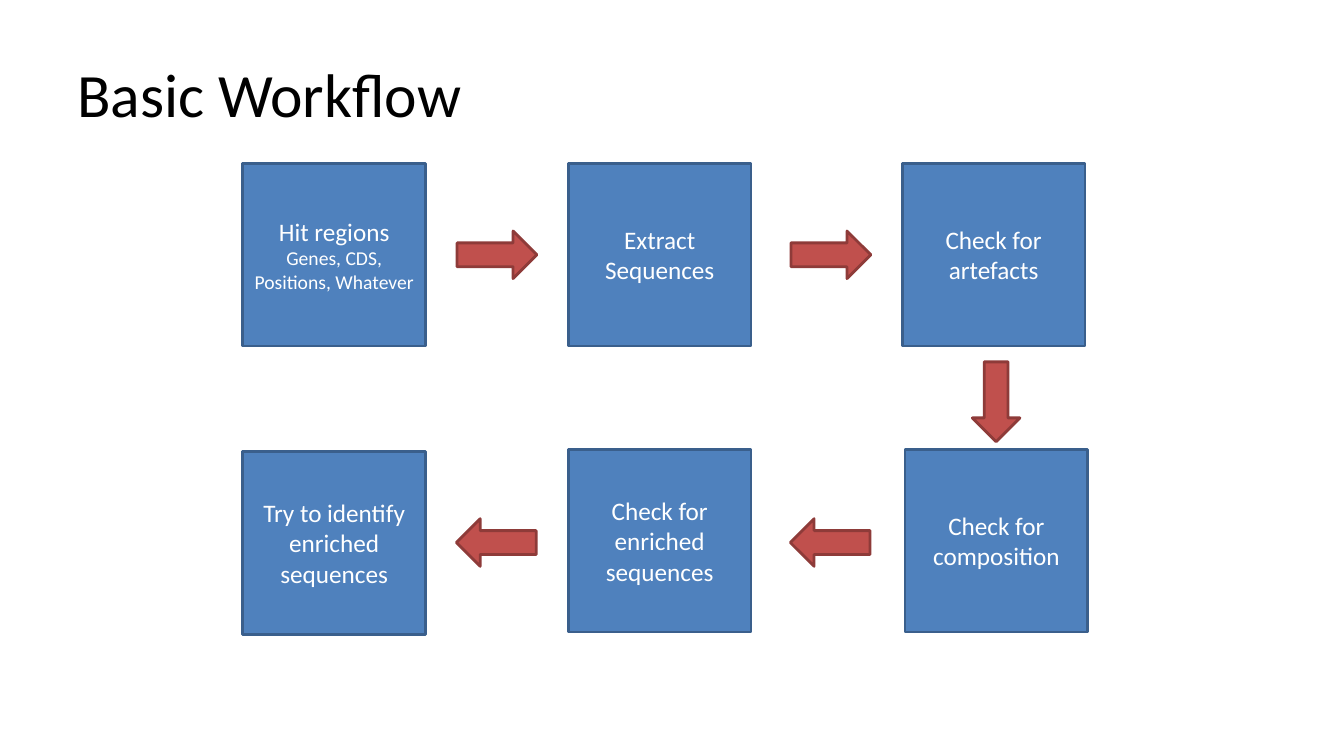
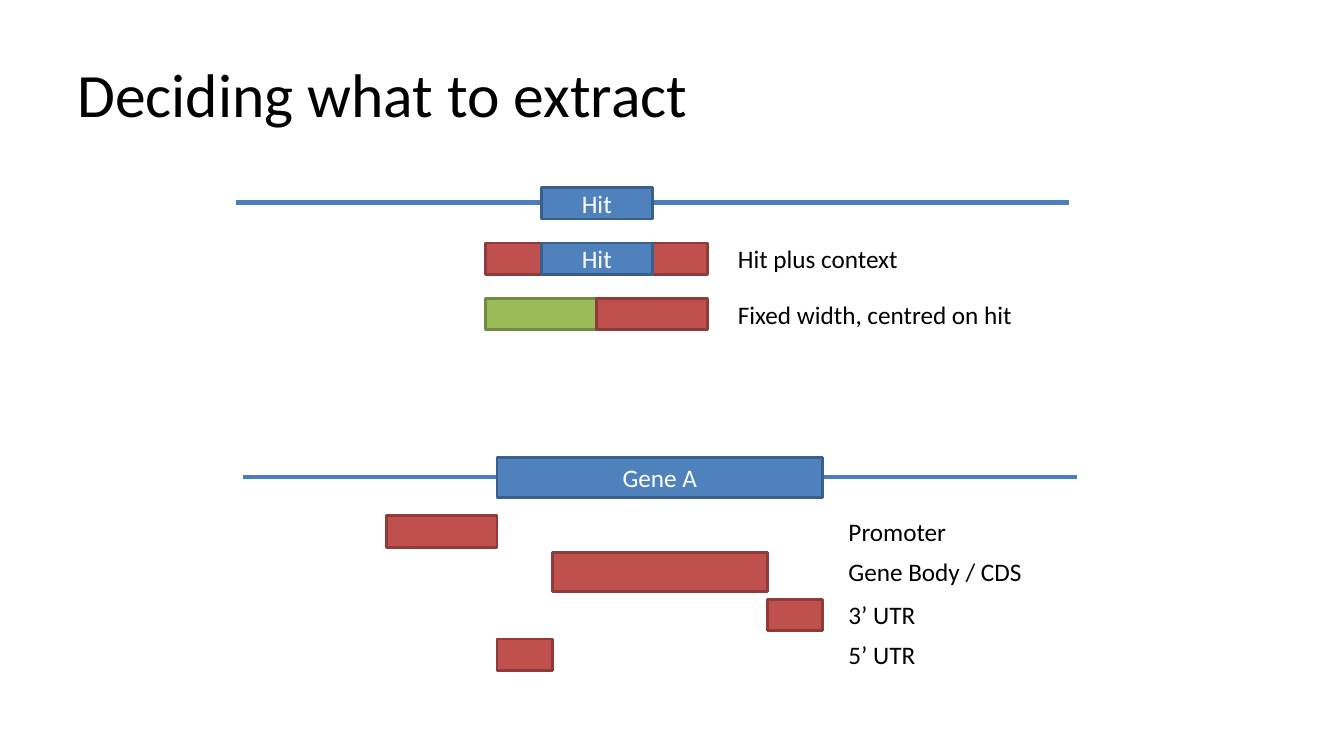
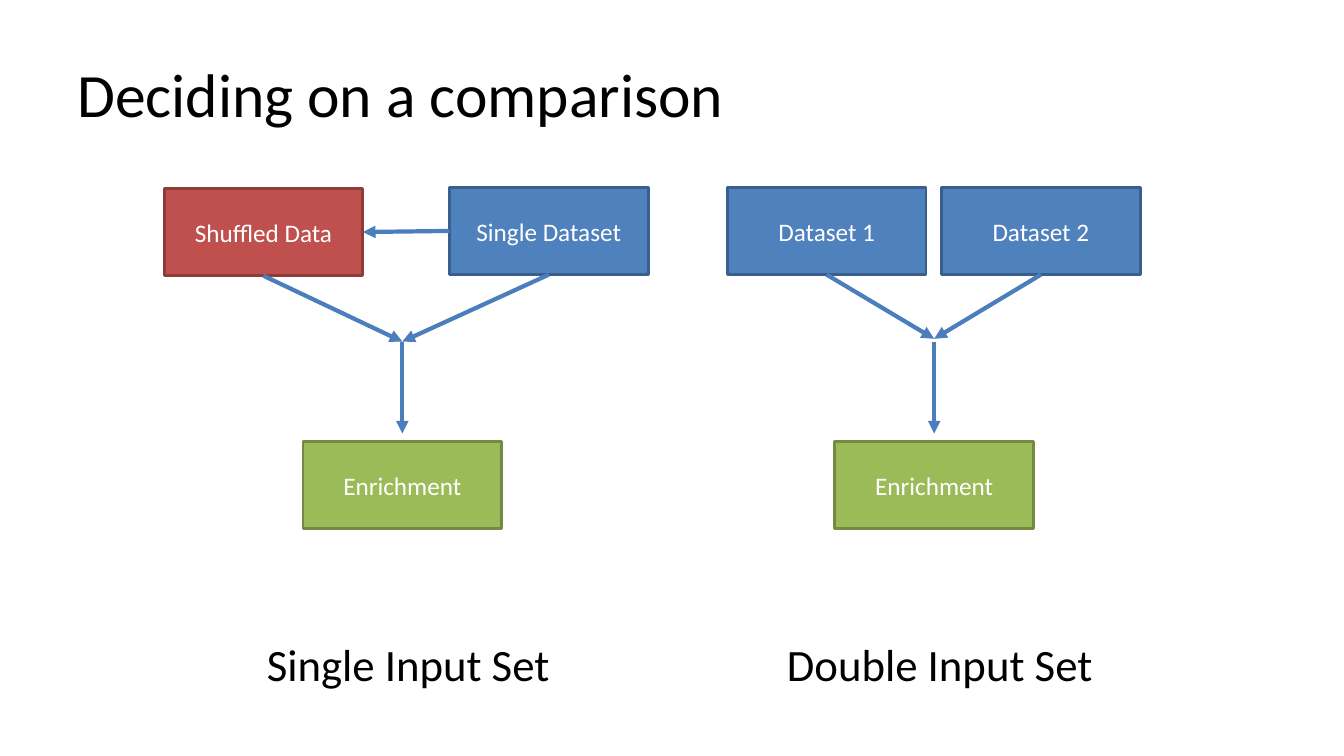
from lxml import etree
from pptx import Presentation
from pptx.dml.color import RGBColor
from pptx.enum import shapes, text
from pptx.oxml import ns
from pptx.util import Pt

COLORS = {
    "black": "000000", "white": "FFFFFF", "connector": "4B7EBC",
    "blue": "4F81BD", "blue_edge": "3A5F8C",
    "red": "C0504D", "red_edge": "8E3B39",
    "green": "9BBB59", "green_edge": "738A42",
}
FONTS = {
    "title": {"name": "Calibri", "size": Pt(44)},
    "caption": {"name": "Calibri", "size": Pt(32)},
    "body": {"name": "Calibri", "size": Pt(18)},
    "detail": {"name": "Calibri", "size": Pt(14)},
}
TITLE_ONLY = 5
TOP, LEFT, BOTTOM, RIGHT = range(4)


def rgb(color):
    return RGBColor.from_string(COLORS[color])


class Deck:
    """Holds the shared style and the slide being built."""

    def __init__(self):
        self.prs = Presentation()
        self.prs.slide_width, self.prs.slide_height = Pt(960), Pt(540)
        self.slide = None

    def add_words(self, paragraph, words, style, color, align):
        paragraph.alignment = align
        run = paragraph.add_run()
        run.text = words
        for key, value in FONTS[style].items():
            setattr(run.font, key, value)
        run.font.color.rgb = rgb(color)

    def new_slide(self, words):
        layout = self.prs.slide_layouts[TITLE_ONLY]
        self.slide = self.prs.slides.add_slide(layout)
        title = self.slide.shapes.title
        place = {"left": 48, "top": 21, "width": 864, "height": 90}
        for key, value in place.items():
            setattr(title, key, Pt(value))
        frame = title.text_frame
        frame.auto_size = text.MSO_AUTO_SIZE.NONE
        frame.vertical_anchor = text.MSO_ANCHOR.MIDDLE
        self.add_words(frame.paragraphs[0], words, "title", "black", text.PP_ALIGN.LEFT)

    def shape(self, kind, x, y, width, height, color):
        shape = self.slide.shapes.add_shape(kind, Pt(x), Pt(y), Pt(width), Pt(height))
        shape.shadow.inherit = False
        shape.fill.solid()
        shape.fill.fore_color.rgb = rgb(color)
        shape.line.color.rgb = rgb(color + "_edge")
        shape.line.width = Pt(2)
        return shape

    def box(self, x, y, width, height, color, words="", detail=""):
        box = self.shape(shapes.MSO_SHAPE.RECTANGLE, x, y, width, height, color)
        frame = box.text_frame
        frame.word_wrap = True
        frame.vertical_anchor = text.MSO_ANCHOR.MIDDLE
        center = text.PP_ALIGN.CENTER
        if words:
            self.add_words(frame.paragraphs[0], words, "body", "white", center)
        if detail:
            self.add_words(frame.add_paragraph(), detail, "detail", "white", center)
        return box

    def block_arrow(self, x, y, rotation):
        arrow = self.shape(shapes.MSO_SHAPE.RIGHT_ARROW, x, y, 57, 34, "red")
        arrow.rotation = rotation

    def label(self, x, y, width, height, words, style="body"):
        label = self.slide.shapes.add_textbox(Pt(x), Pt(y), Pt(width), Pt(height))
        frame = label.text_frame
        frame.word_wrap = False
        frame.auto_size = text.MSO_AUTO_SIZE.SHAPE_TO_FIT_TEXT
        self.add_words(frame.paragraphs[0], words, style, "black", text.PP_ALIGN.LEFT)

    def line(self, start, end, arrow=False, begin=None, finish=None):
        """Draw a line; begin and finish are optional (box, side) joints."""
        line = self.slide.shapes.add_connector(
            shapes.MSO_CONNECTOR.STRAIGHT, *(Pt(v) for v in (*start, *end)))
        line.line.color.rgb = rgb("connector")
        line.line.width = Pt(3)
        properties = line._element.spPr
        if arrow:
            etree.SubElement(properties.get_or_add_ln(), ns.qn("a:tailEnd"), type="triangle")
        etree.SubElement(properties, ns.qn("a:effectLst"))
        if begin:
            line.begin_connect(*begin)
        if finish:
            line.end_connect(*finish)


def workflow(deck):
    deck.new_slide("Basic Workflow")
    # Steps
    steps = [
        (173.5, 116.7, "Hit regions", "Genes, CDS, Positions, Whatever"),
        (406, 116.7, "Extract Sequences", ""),
        (644.5, 116.7, "Check for artefacts", ""),
        (646.5, 321, "Check for composition", ""),
        (406, 321, "Check for enriched sequences", ""),
        (173.5, 322.5, "Try to identify enriched sequences", ""),
    ]
    for x, y, step, detail in steps:
        deck.box(x, y, 130.5, 130.5, "blue", step, detail)
    # Flow between steps
    for x in (326.5, 565):
        deck.block_arrow(x, 165, 0)
        deck.block_arrow(x - 0.5, 370.5, 180)
    deck.block_arrow(683, 270, 90)


def extraction(deck):
    deck.new_slide("Deciding what to extract")
    unit, bar, label_height = 39.6, 22.5, 28.8

    # Hit and its extracted regions
    hit, hit_top = 386.7, 134
    context_top, fixed_top = hit_top + unit, hit_top + 2 * unit
    deck.line((168.5, 144.7), (763.5, 144.7))
    deck.box(hit, hit_top, 2 * unit, bar, "blue", "Hit")
    deck.box(hit - unit, context_top, 4 * unit, bar, "red")
    deck.box(hit, context_top, 2 * unit, bar, "blue", "Hit")
    deck.box(hit - unit, fixed_top, 2 * unit, bar, "green")
    deck.box(hit + unit, fixed_top, 2 * unit, bar, "red")
    for top, width, region in ((context_top, 130.3, "Hit plus context"),
                               (fixed_top, 212.4, "Fixed width, centred on hit")):
        deck.label(520, top + (bar - label_height) / 2, width, label_height, region)

    # Gene and its parts
    gene, gene_width, gene_height = 355, 232.6, 28.2
    gene_end = gene + gene_width
    deck.line((173.5, 340.7), (769, 340.7))
    deck.box(gene, 326.9, gene_width, gene_height, "blue", "Gene A")
    parts = [
        (gene - 2 * unit, 368.4, 2 * unit, bar, 85, "Promoter"),
        (gene + unit, 394.4, gene_width - 2 * unit, gene_height, 139.7, "Gene Body / CDS"),
        (gene_end - unit, 428, unit, bar, 62.6, "3’ UTR"),
        (gene, 456.4, unit, bar, 62.6, "5’ UTR"),
    ]
    for x, y, width, height, label_width, part in parts:
        deck.box(x, y, width, height, "red")
        deck.label(599, y + (height - label_height) / 2, label_width, label_height, part)


def comparison(deck):
    deck.new_slide("Deciding on a comparison")
    width, height = 142, 62.5
    # Inputs: name, left, top, colour
    shuffled, single, first, second = [
        deck.box(x, y, width, height, color, name)
        for name, x, y, color in (
            ("Shuffled Data", 117.2, 134.5, "red"),
            ("Single Dataset", 321, 133.7, "blue"),
            ("Dataset 1", 519.5, 133.7, "blue"),
            ("Dataset 2", 672.5, 133.7, "blue"))]
    deck.line((321, 165), (259, 165.6), True, (single, LEFT), (shuffled, RIGHT))

    # Each pair of inputs meets, then leads to enrichment
    for inputs, meet_x, meet_y in (((single, shuffled), 287.4, 244),
                                   ((first, second), 667.3, 242)):
        for source in inputs:
            deck.line((meet_x, 196), (meet_x, meet_y), True, (source, BOTTOM))
        deck.line((meet_x, 244), (meet_x, 309.6), True)
        deck.box(meet_x - width / 2, 315.3, width, height, "green", "Enrichment")

    # Captions
    deck.label(183.5, 451.5, 219, 46, "Single Input Set", "caption")
    deck.label(555, 451.5, 235.5, 46, "Double Input Set", "caption")


def main():
    deck = Deck()
    for build in (workflow, extraction, comparison):
        build(deck)
    deck.prs.save("out.pptx")


if __name__ == "__main__":
    main()
